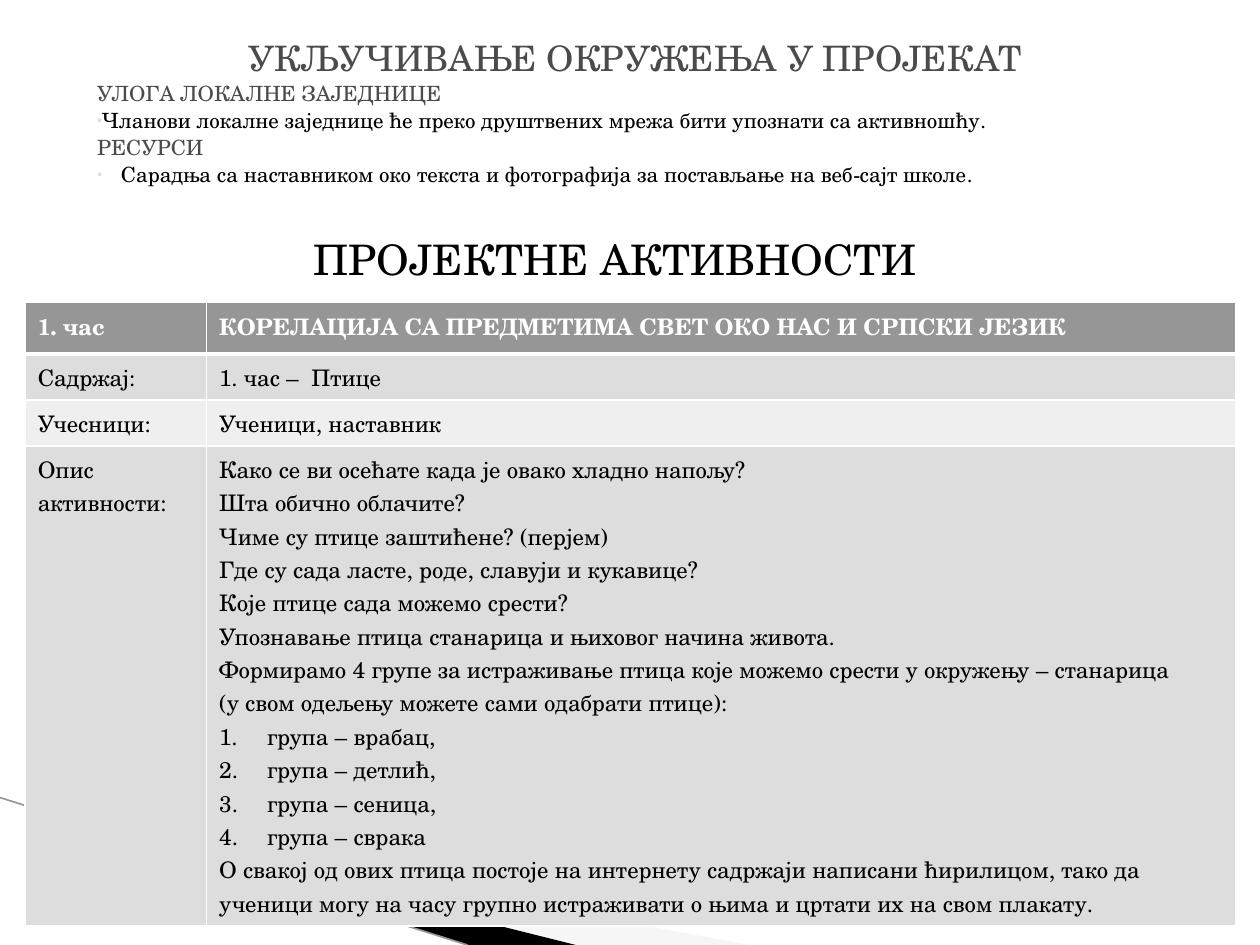
from dataclasses import dataclass

from lxml import etree
from pptx import Presentation
from pptx.dml.color import RGBColor
from pptx.enum.shapes import MSO_CONNECTOR
from pptx.enum.text import MSO_ANCHOR, MSO_AUTO_SIZE, PP_ALIGN
from pptx.oxml.ns import qn
from pptx.util import Emu, Inches, Pt

STRAIGHT = MSO_CONNECTOR.STRAIGHT
MIDDLE = MSO_ANCHOR.MIDDLE
NO_FIT = MSO_AUTO_SIZE.NONE
LEFT, CENTER = PP_ALIGN.LEFT, PP_ALIGN.CENTER

WHITE = RGBColor(0xFF, 0xFF, 0xFF)
BLACK = RGBColor(0, 0, 0)
HEADING = RGBColor(0x4B, 0x4B, 0x4B)
HEADER_FILL = RGBColor(0x96, 0x96, 0x96)
DARK_BAND = RGBColor(0xDD, 0xDD, 0xDD)
LIGHT_BAND = RGBColor(0xEF, 0xEF, 0xEF)
WEDGE = RGBColor(0xEA, 0xEA, 0xEA)
FONT = "TeX Gyre Schola"
WIDTH, HEIGHT = Inches(10), Inches(7.5)


@dataclass
class Line:
    text: str
    size: float = 13
    color: RGBColor = BLACK
    bold: bool = False
    align: PP_ALIGN = LEFT
    bullet: str = ""
    hanging: float = 0


def heading(text: str) -> Line:
    return Line(text, 12, HEADING)


def numbered(text: str) -> Line:
    return Line(text, bullet="1.", hanging=0.38)


ENVIRONMENT = [
    Line("УКЉУЧИВАЊЕ ОКРУЖЕЊА У ПРОЈЕКАТ", 20, HEADING, align=CENTER),
    heading("УЛОГА ЛОКАЛНЕ ЗАЈЕДНИЦЕ"),
    Line("Чланови локалне заједнице ће преко друштвених мрежа бити упознати са активношћу.",
         12, bullet="•"),
    heading("РЕСУРСИ"),
    Line("Сарадња са наставником око текста и фотографија за постављање на веб-сајт школе.",
         12, bullet="•", hanging=0.19),
]
DESCRIPTION = [
    *map(Line, [
        "Како се ви осећате када је овако хладно напољу?",
        "Шта обично облачите?",
        "Чиме су птице заштићене? (перјем)",
        "Где су сада ласте, роде, славуји и кукавице?",
        "Које птице сада можемо срести?",
        "Упознавање птица станарица и њиховог начина живота.",
        "Формирамо 4 групе за истраживање птица које можемо срести у окружењу – станарица",
        "(у свом одељењу можете сами одабрати птице):",
    ]),
    *(numbered(f"група – {bird}") for bird in ("врабац,", "детлић,", "сеница,", "сврака")),
    Line("О свакој од ових птица постоје на интернету садржаји написани ћирилицом, тако да "
         "ученици могу на часу групно истраживати о њима и цртати их на свом плакату."),
]
ACTIVITIES = [
    ([Line("1. час", color=WHITE, bold=True)],
     [Line("КОРЕЛАЦИЈА СА ПРЕДМЕТИМА СВЕТ ОКО НАС И СРПСКИ ЈЕЗИК", color=WHITE, bold=True)]),
    ([Line("Садржај:")], [Line("1. час –  Птице")]),
    ([Line("Учесници:")], [Line("Ученици, наставник")]),
    ([Line("Опис"), Line("активности:")], DESCRIPTION),
]
ROW_FILLS = [HEADER_FILL, DARK_BAND, LIGHT_BAND, DARK_BAND]
ROW_HEIGHTS = [0.41, 0.35, 0.33, 3.25]
COLUMN_WIDTHS = [1.44, 8.17]


def add_bullet(properties, line: Line) -> None:
    if line.bullet == "•":
        color = etree.SubElement(properties, qn("a:buClr"))
        etree.SubElement(color, qn("a:srgbClr"), val=str(DARK_BAND))
        etree.SubElement(properties, qn("a:buSzPct"), val="68000")
        etree.SubElement(properties, qn("a:buChar"), char="•")
    elif line.bullet:
        etree.SubElement(properties, qn("a:buAutoNum"), type="arabicPeriod")
    else:
        etree.SubElement(properties, qn("a:buNone"))


def write(frame, lines: list[Line], gap: float = 0, spacing: float = 1) -> None:
    for index, line in enumerate(lines):
        paragraph = frame.add_paragraph() if index else frame.paragraphs[0]
        properties = paragraph._p.get_or_add_pPr()
        properties.set("marL", str(Inches(line.hanging)))
        properties.set("indent", str(-Inches(line.hanging)))
        add_bullet(properties, line)
        paragraph.alignment = line.align
        paragraph.line_spacing = spacing
        paragraph.space_before = Pt(gap if index else 0)
        run = paragraph.add_run()
        run.text = line.text
        run.font.name = FONT
        run.font.size = Pt(line.size)
        run.font.bold = line.bold
        run.font.color.rgb = line.color


def fill_placeholder(holder, box: tuple, lines: list[Line], gap: float = 0,
                     spacing: float = 1) -> None:
    holder.left, holder.top, holder.width, holder.height = map(Inches, box)
    frame = holder.text_frame
    frame.word_wrap = True
    frame.auto_size = NO_FIT
    frame.vertical_anchor = MIDDLE
    write(frame, lines, gap, spacing)


def add_wedge(slide, points: list[tuple], color: RGBColor, opacity: int = 100) -> None:
    corners = [(Inches(x), Inches(y)) for x, y in points]
    builder = slide.shapes.build_freeform(*corners[0])
    builder.add_line_segments(corners[1:], close=True)
    wedge = builder.convert_to_shape()
    wedge.shadow.inherit = False
    wedge.line.fill.background()
    wedge.fill.solid()
    wedge.fill.fore_color.rgb = color
    if opacity < 100:
        tint = wedge._element.spPr.find(f"{qn('a:solidFill')}/{qn('a:srgbClr')}")
        etree.SubElement(tint, qn("a:alpha"), val=str(opacity * 1000))


def add_corner(slide) -> None:
    add_wedge(slide, [(0.55, 6.5), (5.95, 7.5), (4.56, 7.5)], WEDGE, 40)
    add_wedge(slide, [(0.53, 6.49), (4.57, 7.5), (3.72, 7.5)], BLACK)
    edge = slide.shapes.add_connector(STRAIGHT, 0, Inches(6.33), Inches(3.71), HEIGHT)
    edge.line.color.rgb = HEADER_FILL
    edge.line.width = Pt(0.95)
    etree.SubElement(edge._element.spPr, qn("a:effectLst"))


def set_borders(cell, widths: dict[str, float]) -> None:
    properties = cell._tc.get_or_add_tcPr()
    for index, (side, width) in enumerate(widths.items()):
        border = etree.Element(qn(f"a:{side}"), w=str(Pt(width)))
        paint = etree.SubElement(border, qn("a:solidFill"))
        etree.SubElement(paint, qn("a:srgbClr"), val=str(WHITE))
        properties.insert(index, border)


def add_activities(slide) -> None:
    table = slide.shapes.add_table(
        len(ACTIVITIES), len(COLUMN_WIDTHS), Inches(0.2), Inches(2.4),
        Emu(sum(map(Inches, COLUMN_WIDTHS))), Emu(sum(map(Inches, ROW_HEIGHTS)))).table
    table.horz_banding = False
    for column, width in zip(table.columns, COLUMN_WIDTHS):
        column.width = Inches(width)
    for index, contents in enumerate(ACTIVITIES):
        table.rows[index].height = Inches(ROW_HEIGHTS[index])
        borders = {"lnL": 1, "lnR": 1, "lnT": 3 if index == 1 else 1,
                   "lnB": 1 if index else 3}
        for cell, lines in zip(table.rows[index].cells, contents):
            cell.fill.solid()
            cell.fill.fore_color.rgb = ROW_FILLS[index]
            set_borders(cell, borders)
            write(cell.text_frame, lines)


def main() -> None:
    deck = Presentation()
    deck.slide_width, deck.slide_height = WIDTH, HEIGHT
    slide = deck.slides.add_slide(deck.slide_layouts[1])
    add_corner(slide)
    fill_placeholder(slide.placeholders[1], (0.67, -0.03, 8.74, 1.9), ENVIRONMENT, 4, 0.8)
    add_activities(slide)
    fill_placeholder(slide.shapes.title, (0.83, 1.7, 8.11, 0.71),
                     [Line("ПРОЈЕКТНЕ АКТИВНОСТИ", 24, align=CENTER)])
    deck.save("out.pptx")


if __name__ == "__main__":
    main()
